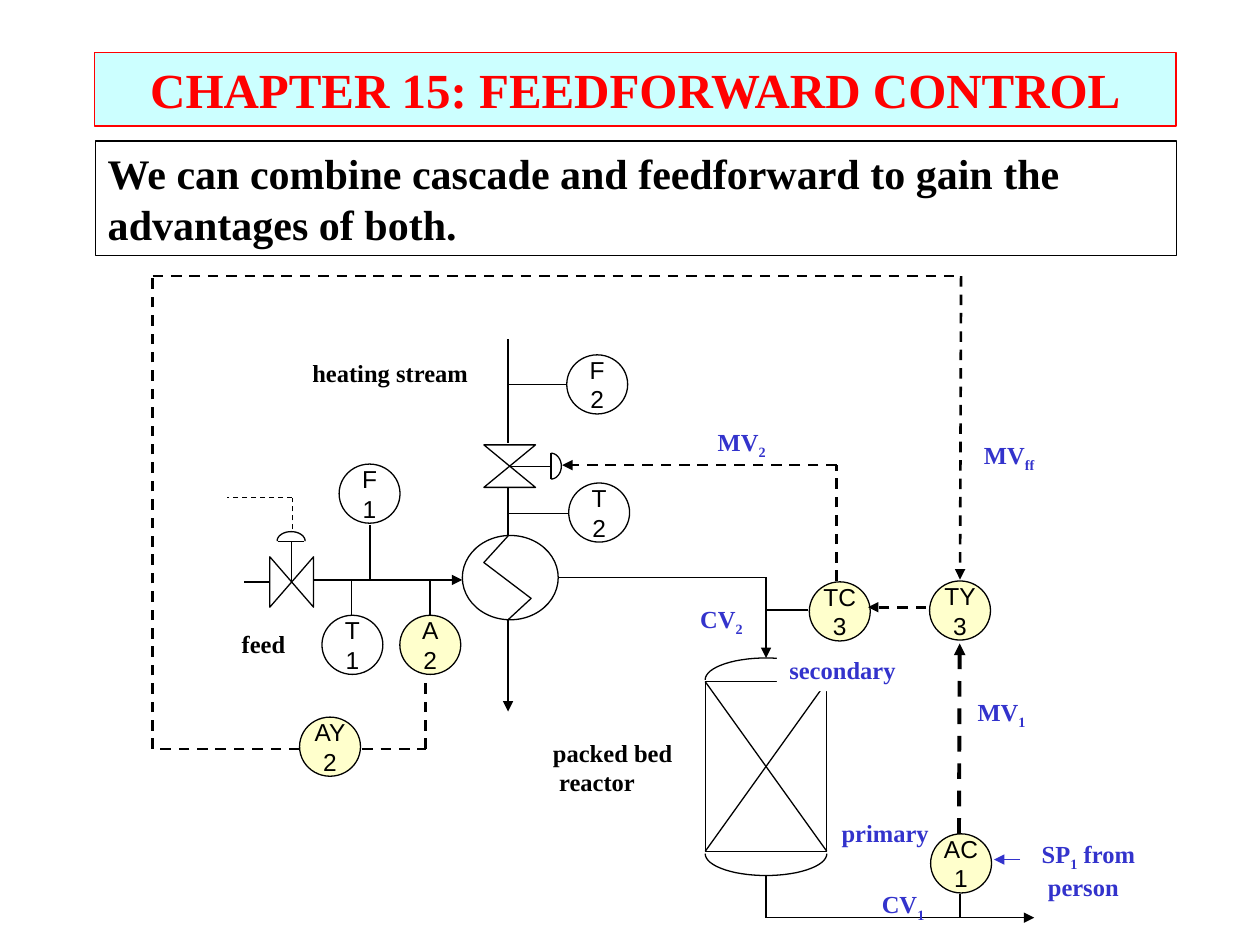
from math import cos, radians, sin

from lxml import etree
from pptx import Presentation
from pptx.dml.color import RGBColor
from pptx.enum import dml, shapes, text
from pptx.oxml import ns
from pptx.util import Pt

BLACK = RGBColor(0, 0, 0)
WHITE = RGBColor(0xFF, 0xFF, 0xFF)
RED = RGBColor(0xFF, 0, 0)
BLUE = RGBColor(0x33, 0x33, 0xCC)
CYAN = RGBColor(0xCC, 0xFF, 0xFF)
CREAM = RGBColor(0xFF, 0xFF, 0xCC)
THIN = 0.75
SERIF = "Times New Roman"


def write(shape, lines, size=14, color=BLACK, font=SERIF, bold=True,
          align=text.PP_ALIGN.LEFT, anchor=text.MSO_ANCHOR.TOP, wrap=False):
    """Fill the shape with lines; every second part between underscores is a subscript."""
    frame = shape.text_frame
    frame.word_wrap = wrap
    frame.vertical_anchor = anchor
    for i, line in enumerate(lines):
        para = frame.paragraphs[0] if i == 0 else frame.add_paragraph()
        para.alignment = align
        for j, part in enumerate(line.split("_")):
            run = para.add_run()
            run.text = part
            run.font.size = Pt(size)
            run.font.name = font
            run.font.bold = bold
            run.font.color.rgb = color
            if j % 2:
                run._r.get_or_add_rPr().set("baseline", "-25000")


def wire(*points, width=THIN, dash=False, arrow=False, color=BLACK):
    """Join the points with straight connectors; an arrowhead goes on the last."""
    for start, end in zip(points, points[1:]):
        link = slide.shapes.add_connector(
            shapes.MSO_CONNECTOR.STRAIGHT, *map(Pt, start + end))
        link.line.color.rgb = color
        link.line.width = Pt(width)
        if dash:
            link.line.dash_style = dml.MSO_LINE.DASH
        if arrow and end == points[-1]:
            etree.SubElement(link.line._get_or_add_ln(), ns.qn("a:tailEnd"), type="triangle")
        etree.SubElement(link._element.spPr, ns.qn("a:effectLst"))


deck = Presentation()
deck.slide_width, deck.slide_height = Pt(720), Pt(540)
slide = deck.slides.add_slide(deck.slide_layouts[5])

# Title and statement
title = slide.shapes.title
title.left, title.top, title.width, title.height = Pt(54), Pt(30), Pt(618), Pt(42)
title.fill.solid()
title.fill.fore_color.rgb = CYAN
title.line.color.rgb = RED
title.line.width = Pt(THIN)
write(title, ["CHAPTER 15: FEEDFORWARD CONTROL"], size=28, color=RED, wrap=True,
      align=text.PP_ALIGN.CENTER, anchor=text.MSO_ANCHOR.MIDDLE)

# Statement frame, reactor body, heat exchanger and instruments
RECT, OVAL = shapes.MSO_SHAPE.RECTANGLE, shapes.MSO_SHAPE.OVAL
bodies = [
    (RECT, 54.5, 80.5, 618, 65.5, None, None),
    (RECT, 403, 389.5, 69.5, 97, None, None),
    (OVAL, 264.2, 306, 54.8, 48.2, None, None),
]
tags = [
    ("AC", "1", 531.8, 476.5, CREAM), ("TC", "3", 462.5, 332.5, CREAM),
    ("T", "2", 325, 276, None), ("F", "2", 323.9, 202.8, None),
    ("F", "1", 193.8, 265.2, None), ("T", "1", 184, 351.6, None),
    ("A", "2", 228.5, 351.6, CREAM), ("AY", "2", 171.2, 409.8, CREAM),
    ("TY", "3", 531.2, 332, CREAM),
]
bodies += [(OVAL, x, y, 34.8, 33.8, fill, (kind, loop)) for kind, loop, x, y, fill in tags]
for form, x, y, w, h, fill, tag in bodies:
    body = slide.shapes.add_shape(form, Pt(x), Pt(y), Pt(w), Pt(h))
    body.shadow.inherit = False
    body.line.color.rgb = BLACK
    body.line.width = Pt(THIN)
    if fill:
        body.fill.solid()
        body.fill.fore_color.rgb = fill
    else:
        body.fill.background()
    if tag:
        write(body, tag, font="Arial", bold=False,
              align=text.PP_ALIGN.CENTER, anchor=text.MSO_ANCHOR.MIDDLE)
    elif w == 618:
        write(body, ["We can combine cascade and feedforward to gain the advantages of both."],
              size=24, wrap=True, anchor=text.MSO_ANCHOR.MIDDLE)

# Valve bodies and the exchanger coil, then half-ellipse domes by centre, radii and first angle
outlines = [
    ([(276.5, 254.2), (306, 254.2), (276.5, 278.5), (306, 278.5)], True),
    ([(154.2, 318.2), (154.2, 347), (179.2, 318.2), (179.2, 347)], True),
    ([(290.6, 306), (276.5, 321.5), (303.5, 342), (290.3, 354.2)], False),
]
domes = [
    (437.75, 388.5, 34.75, 12.5, 180), (437.75, 487.8, 34.75, 12.5, 0),
    (314.8, 266.4, 6, 7.4, -90), (166.4, 309.2, 8, 5.4, 180),
]
for x, y, rx, ry, first in domes:
    turns = [radians(first + step) for step in range(0, 181, 6)]
    outlines.append(([(x + rx * cos(t), y + ry * sin(t)) for t in turns], False))
for points, closed in outlines:
    fine = [(x * 100, y * 100) for x, y in points]
    pen = slide.shapes.build_freeform(*fine[0], scale=Pt(1) / 100)
    pen.add_line_segments(fine[1:], close=closed)
    edge = pen.convert_to_shape()
    edge.shadow.inherit = False
    edge.fill.background()
    edge.line.color.rgb = BLACK
    edge.line.width = Pt(THIN)

# Process pipes
pipes = [
    [(403, 389.5), (472.5, 486.5)], [(472.5, 389.5), (403, 486.5)],
    [(290.3, 194), (290.3, 253.2)], [(290.3, 278.5), (290.3, 305.5)],
    [(291, 266.4), (314.8, 266.4)], [(314.8, 259), (314.8, 273.8)],
    [(166.4, 332.6), (166.4, 309.5)], [(159, 309.5), (174, 309.5)],
    [(154.2, 332.6), (139.5, 332.6)],
    [(323.5, 219.6), (290.3, 219.6)], [(325, 293.6), (290.3, 293.6)],
    [(461.5, 348.5), (437.75, 348.5)], [(548.6, 511), (548.6, 524.4)],
    [(211.5, 300), (211.5, 331)], [(201, 351.5), (201, 331.5)],
    [(245.8, 351.5), (245.8, 331.5)],
]
for pipe in pipes:
    wire(*pipe)
flows = [
    [(437.75, 500.4), (437.75, 524.4), (591, 524.4)],
    [(290.3, 354.2), (290.3, 406.6)],
    [(319.5, 330), (437.75, 330), (437.75, 376)],
    [(179, 331.4), (264.2, 331.4)],
]
for flow in flows:
    wire(*flow, arrow=True)

# Control signals
wire((167, 302.5), (167, 284.4), (129.6, 284.4), dash=True)
wire((548, 476.5), (548.4, 367.7), width=2.25, dash=True, arrow=True)
wire((478.2, 332), (478.2, 265.8), (321.2, 265.8), width=1.5, dash=True, arrow=True)
wire((207, 428), (243.2, 428), (243.2, 386), width=1.5, dash=True)
wire((171.2, 428), (87.2, 428), (87.2, 157.8), (549.2, 157.8), (548.6, 331.2),
     width=1.5, dash=True, arrow=True)
wire((529.2, 347), (496, 347), width=1.5, dash=True, arrow=True)
wire((583, 491.2), (568, 491.2), color=BLUE, arrow=True)

# Labels
labels = [
    (["feed"], 131, 355.6, 39.6, BLACK),
    (["heating stream"], 171.4, 201, 103.7, BLACK),
    (["packed bed", " reactor"], 308.9, 418.2, 82.8, BLACK),
    (["SP_1_ from", " person"], 588.2, 475.8, 68.4, BLUE),
    (["MV_1"], 551.5, 394.5, 42.5, BLUE),
    (["CV_2"], 393, 341.5, 42.5, BLUE),
    (["MV_2"], 403, 240.5, 42.5, BLUE),
    (["CV_1"], 496.8, 504.7, 42.5, BLUE),
    (["MV_ff"], 555.2, 247.7, 44, BLUE),
    (["primary"], 473.8, 463.7, 67, BLUE),
    (["secondary"], 444, 371, 80, BLUE),
]
for lines, x, y, w, color in labels:
    label = slide.shapes.add_textbox(Pt(x), Pt(y), Pt(w), Pt(7 + 17 * len(lines)))
    write(label, lines, color=color)
    if lines == ["secondary"]:
        label.fill.solid()
        label.fill.fore_color.rgb = WHITE
        label.text_frame.word_wrap = True

deck.save("out.pptx")
